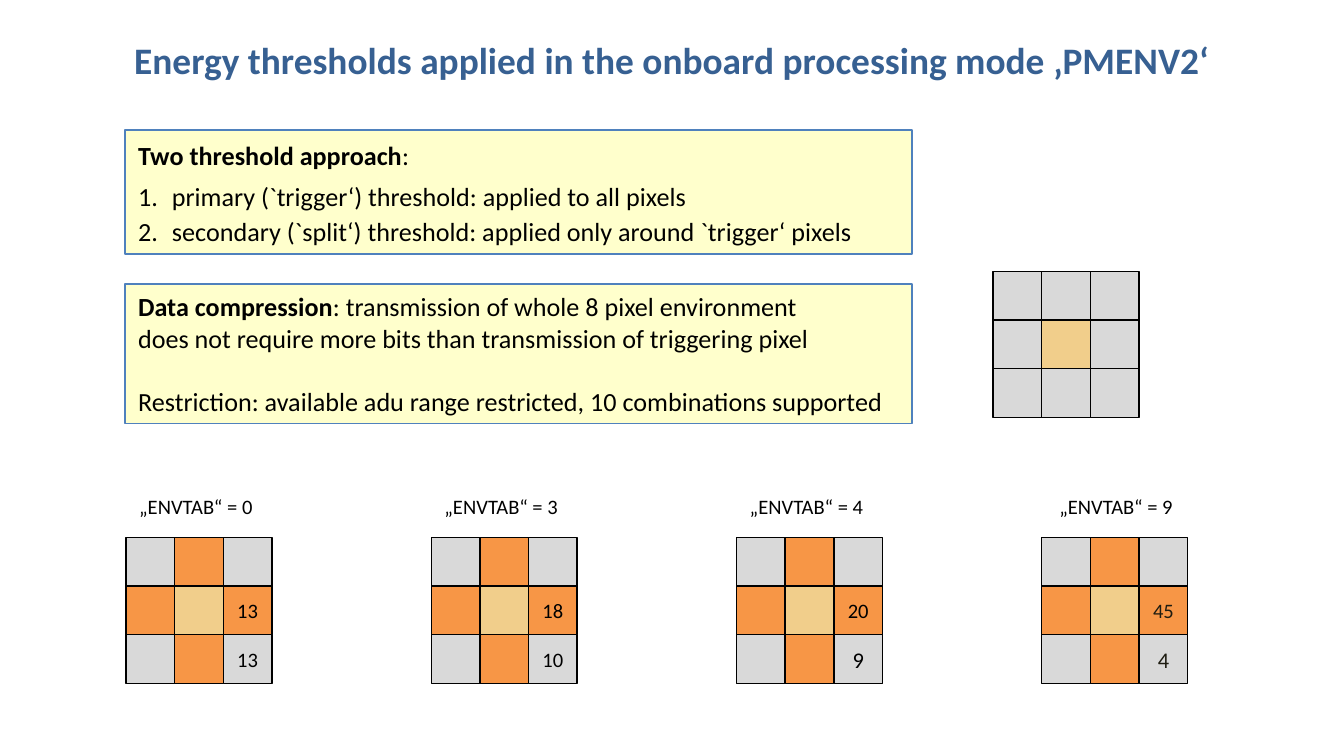
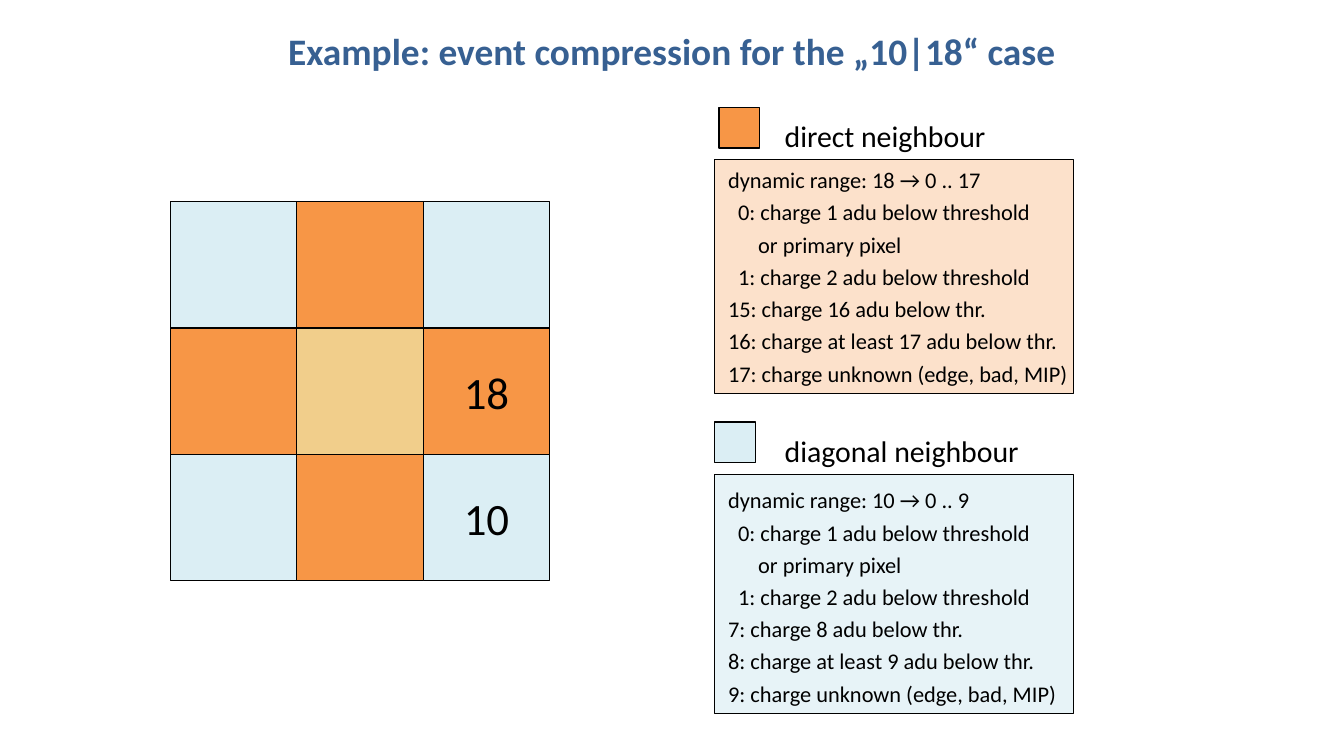
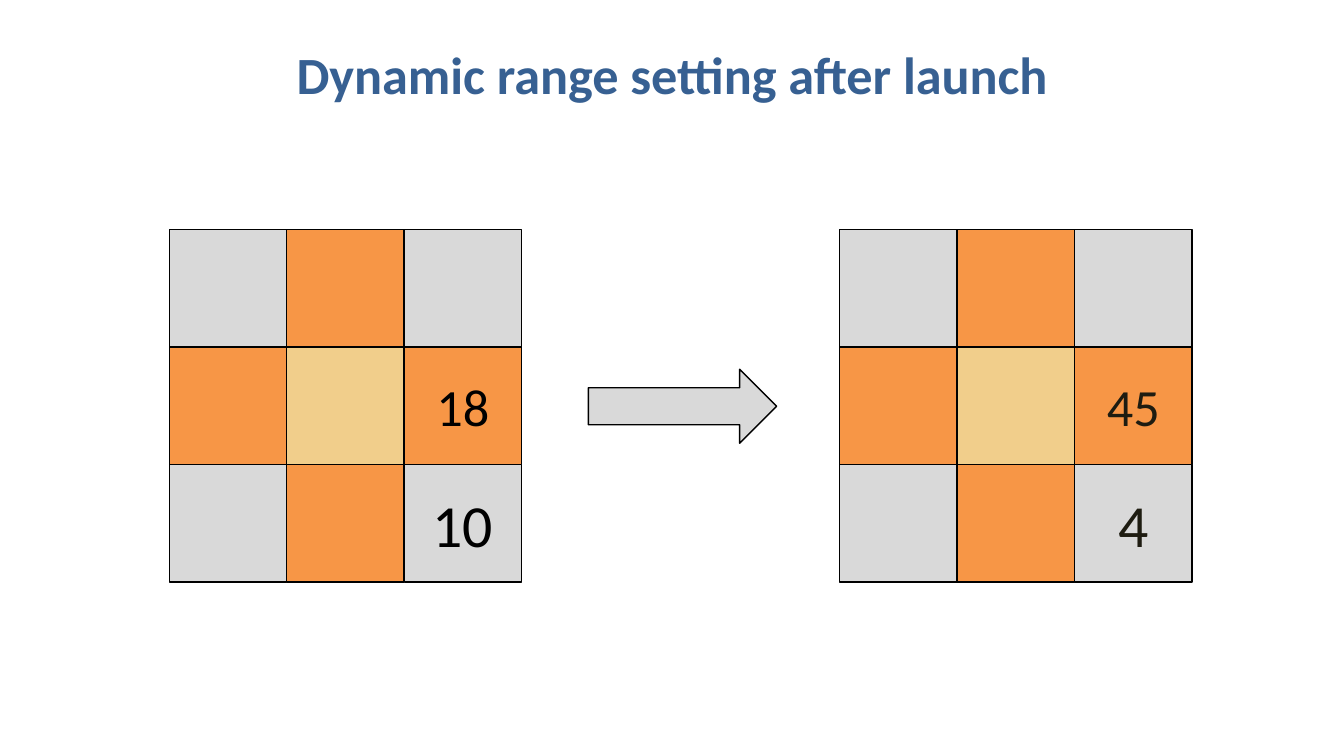
from lxml import etree
from pptx import Presentation
from pptx.dml.color import RGBColor
from pptx.enum.shapes import MSO_SHAPE
from pptx.enum.text import MSO_ANCHOR, PP_ALIGN
from pptx.oxml.ns import qn
from pptx.util import Cm, Pt

RECT = MSO_SHAPE.RECTANGLE
ARROW = MSO_SHAPE.RIGHT_ARROW
CENTER, LEFT = PP_ALIGN.CENTER, PP_ALIGN.LEFT
TOP, MIDDLE = MSO_ANCHOR.TOP, MSO_ANCHOR.MIDDLE

FONT = "Calibri"
WIDTH, HEIGHT = 25.4, 14.29
HEX = {
    "title": "376092", "black": "000000", "dark": "1E1C11",
    "note": "FFFFCC", "edge": "4F81BD", "gray": "D9D9D9",
    "core": "F1CE8B", "direct": "F79646", "diag": "DBEEF4",
}

NOTES = [
    (2.46, 2.34, [
        {"lead": "Two threshold approach", "text": ":", "line": 1.1},
        {"text": "primary (`trigger‘) threshold: applied to all pixels",
         "line": 1.3, "number": True},
        {"text": "secondary (`split‘) threshold: applied only around `trigger‘ pixels",
         "line": 1.1, "number": True},
    ]),
    (5.37, 2.64, [
        {"lead": "Data compression", "text": ": transmission of whole 8 pixel environment"},
        {"text": "does not require more bits than transmission of triggering pixel"},
        {"text": "Restriction: available adu range restricted, 10 combinations supported",
         "before": 17},
    ]),
]

TABLES = [
    ("„ENVTAB“ = 0", 0, ("13", 11), ("13", 11), "black"),
    ("„ENVTAB“ = 3", 0, ("18", 11), ("10", 11), "black"),
    ("„ENVTAB“ = 4", 0, ("20", 11), ("9", 12), "black"),
    ("„ENVTAB“ = 9", 0.08, ("45", 11), ("4", 12), "dark"),
]

CODES = [
    {"name": "direct neighbour", "fill": "direct", "alpha": 28,
     "swatch": (13.59, 2.03), "label": 1.96, "box": (3.02, 4.42), "text": 2.92,
     "lines": [
         (0, "dynamic range: 18 → 0 .. 17"),
         (0.19, "0: charge 1 adu below threshold"),
         (0.57, "or primary pixel"),
         (0.19, "1: charge 2 adu below threshold"),
         (0, "15: charge 16 adu below thr."),
         (0, "16: charge at least 17 adu below thr."),
         (0, "17: charge unknown (edge, bad, MIP)"),
     ]},
    {"name": "diagonal neighbour", "fill": "diag", "alpha": 66,
     "swatch": (13.51, 7.98), "label": 7.92, "box": (8.97, 4.52), "text": 8.97,
     "lines": [
         (0, "dynamic range: 10 → 0 .. 9"),
         (0.19, "0: charge 1 adu below threshold"),
         (0.57, "or primary pixel"),
         (0.19, "1: charge 2 adu below threshold"),
         (0, "7: charge 8 adu below thr."),
         (0, "8: charge at least 9 adu below thr."),
         (0, "9: charge unknown (edge, bad, MIP)"),
     ]},
]

RANGES = [
    (3.2, ("18", 28), ("10", 32), "black"),
    (15.87, ("45", 28), ("4", 32), "dark"),
]


def rgb(name):
    return RGBColor.from_string(HEX[name])


def place(box):
    return [Cm(v) for v in box]


def draw(shapes, box, fill, edge="black", kind=RECT, alpha=None):
    shape = shapes.add_shape(kind, *place(box))
    shape.shadow.inherit = False
    shape.fill.solid()
    shape.fill.fore_color.rgb = rgb(fill)
    shape.line.color.rgb = rgb(edge)
    shape.line.width = Pt(0.75)
    if alpha:
        tint = shape._element.spPr.find(qn("a:solidFill"))[0]
        etree.SubElement(tint, qn("a:alpha")).set("val", str(alpha * 1000))
    return shape


def write(shape, paras, size, color="black", align=LEFT, anchor=TOP, bold=False):
    frame = shape.text_frame
    frame.word_wrap = True
    frame.vertical_anchor = anchor
    for i, item in enumerate(paras):
        para = frame.add_paragraph() if i else frame.paragraphs[0]
        lead = item.get("lead")
        para.text = lead or item["text"]
        if lead:
            para.add_run().text = item["text"]
        para.alignment = align
        para.line_spacing = item.get("line", 1.0)
        para.space_before = Pt(item.get("before", 0))
        props = para._p.get_or_add_pPr()
        if item.get("number"):
            props.set("marL", str(Cm(0.64)))
            props.set("indent", str(-Cm(0.64)))
            etree.SubElement(props, qn("a:buAutoNum")).set("type", "arabicPeriod")
        elif item.get("indent"):
            props.set("marL", str(Cm(item["indent"])))
        for j, run in enumerate(para.runs):
            run.font.name = FONT
            run.font.size = Pt(size)
            run.font.bold = bold or bool(lead and j == 0)
            run.font.color.rgb = rgb(color)


def label(shapes, box, paras, size, **style):
    write(shapes.add_textbox(*place(box)), paras, size, **style)


def grid(shapes, left, top, cell, side="direct", corner="gray",
         near=None, far=None, color="black"):
    marks = {(1, 2): near, (2, 2): far}
    for row in range(3):
        for col in range(3):
            gap = abs(row - 1) + abs(col - 1)
            box = (left + col * cell, top + row * cell, cell, cell)
            pixel = draw(shapes, box, ("core", side, corner)[gap])
            mark = marks.get((row, col))
            if mark:
                frame = pixel.text_frame
                frame.margin_left = frame.margin_right = 0
                frame.margin_top = frame.margin_bottom = 0
                write(pixel, [{"text": mark[0]}], mark[1], color, CENTER, MIDDLE)


def group(shapes):
    return shapes.add_group_shape().shapes


def start(deck, title, top, size=20):
    shapes = deck.slides.add_slide(deck.slide_layouts[6]).shapes
    label(shapes, (0, top, WIDTH, size * 0.06), [{"text": title, "line": 1.2}],
          size, color="title", align=CENTER, bold=True)
    return shapes


def thresholds(deck):
    shapes = start(deck, "Energy thresholds applied in the onboard processing mode ‚PMENV2‘", 0.41)
    for top, high, paras in NOTES:
        write(draw(shapes, (2.36, top, 14.88, high), "note", "edge"), paras, 14)
    grid(group(shapes), 18.77, 5.13, 0.92, side="gray")
    for i, (name, shift, near, far, color) in enumerate(TABLES):
        left = 2.38 + i * 5.77
        part = group(shapes)
        grid(part, left, 10.16, 0.92, near=near, far=far, color=color)
        label(part, (left + shift, 9.22, 2.74, 0.74), [{"text": name}], 11)


def example(deck):
    shapes = start(deck, "Example: event compression for the „10|18“ case", 0.23)
    grid(group(shapes), 3.22, 3.81, 2.39, corner="diag", near=("18", 24), far=("10", 24))
    for code in CODES:
        top, high = code["box"]
        draw(shapes, (13.51, top, 6.78, high), code["fill"], alpha=code["alpha"])
        part = group(shapes)
        draw(part, (*code["swatch"], 0.77, 0.77), code["fill"])
        label(part, (14.58, code["label"], 4.98, 1.02),
              [{"text": code["name"], "line": 1.2}], 16)
        lines = [{"text": text, "indent": indent, "line": 1.2}
                 for indent, text in code["lines"]]
        label(shapes, (13.51, code["text"], 7.01, 4.52), lines, 12)


def launch(deck):
    shapes = start(deck, "Dynamic range setting after launch", 0.43, 28)
    for left, near, far, color in RANGES:
        grid(group(shapes), left, 4.34, 2.22, near=near, far=far, color=color)
    draw(shapes, (11.12, 6.98, 3.56, 1.4), "gray", kind=ARROW)


def main():
    deck = Presentation()
    deck.slide_width, deck.slide_height = Cm(WIDTH), Cm(HEIGHT)
    thresholds(deck)
    example(deck)
    launch(deck)
    deck.save("out.pptx")


if __name__ == "__main__":
    main()
